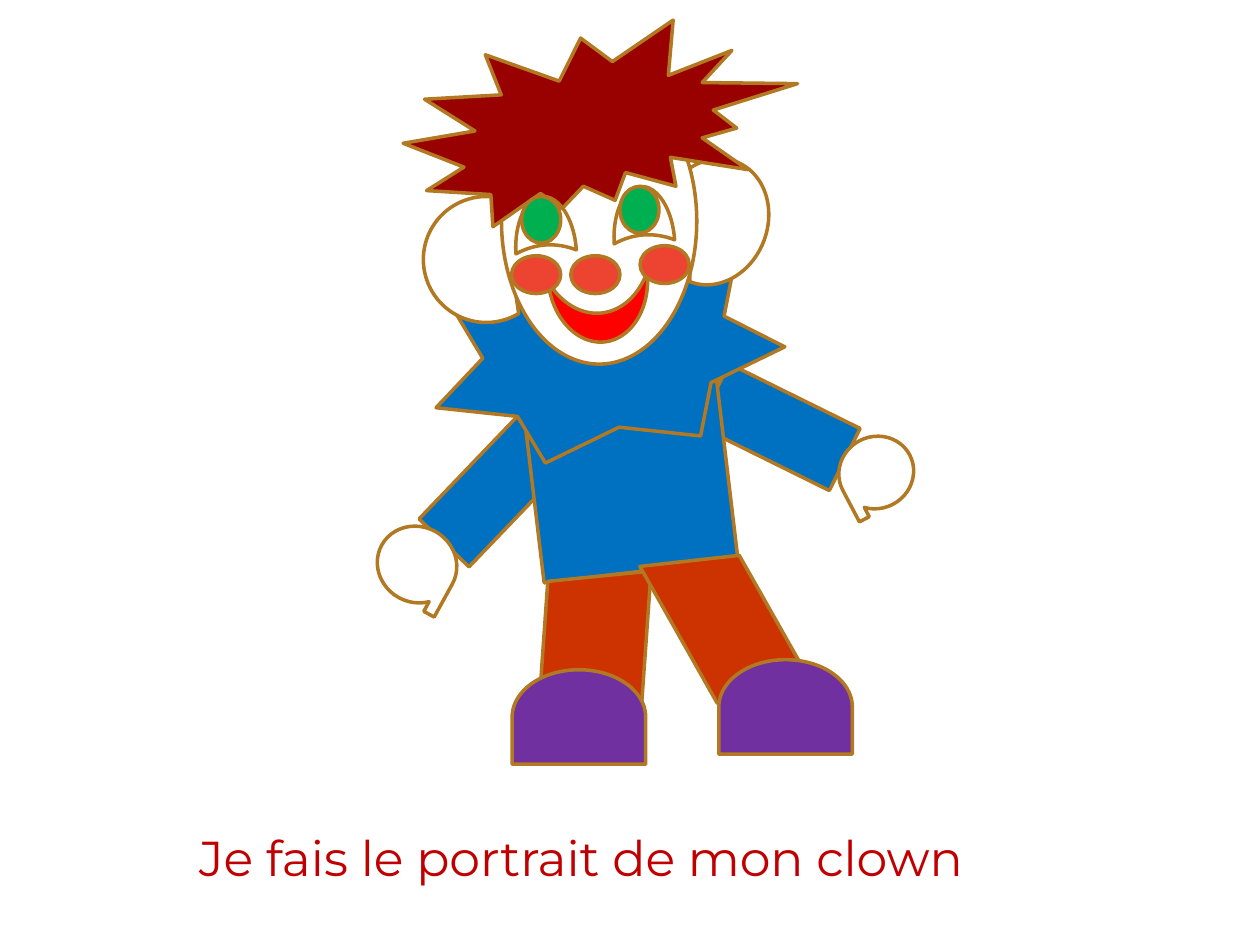
from dataclasses import dataclass

from pptx import Presentation
from pptx import util as u
from pptx.dml.color import RGBColor
from pptx.enum import shapes, text

Kind = shapes.MSO_SHAPE


@dataclass(frozen=True)
class Theme:
    font: str = "Montserrat"
    caption_size: int = 28
    line_width: int = 2
    caption: str = "C00000"
    outline: str = "B27822"
    skin: str = "FFFFFF"
    clothes: str = "0070C0"
    hair: str = "990000"
    mouth: str = "FF0000"
    iris: str = "00B050"
    blush: str = "ED4331"
    trousers: str = "CC3300"
    shoe: str = "7030A0"


class ClownSlide:
    def __init__(self, page, theme):
        self.page = page
        self.theme = theme

    def place(self, item, at):
        item.left, item.top, item.width, item.height = (u.Inches(v) for v in at)

    def draw(self, kind, at, fill=None, turn=0, bend=None, flips=()):
        """Add one outlined body piece; no fill leaves it see-through."""
        shape = self.page.shapes.add_shape(kind, *(u.Inches(v) for v in at))
        shape.shadow.inherit = False
        shape.rotation = turn
        if bend is not None:
            shape.adjustments[0] = bend
        if fill:
            shape.fill.solid()
            shape.fill.fore_color.rgb = RGBColor.from_string(fill)
        else:
            shape.fill.background()
        shape.line.color.rgb = RGBColor.from_string(self.theme.outline)
        shape.line.width = u.Pt(self.theme.line_width)
        for flip in flips:
            shape._element.spPr.xfrm.set(flip, "1")

    def caption(self, wording, at):
        """Use the title placeholder as the caption under the drawing."""
        box = self.page.shapes.title
        self.place(box, at)
        frame = box.text_frame
        frame.word_wrap = False
        frame.auto_size = text.MSO_AUTO_SIZE.NONE
        frame.vertical_anchor = text.MSO_ANCHOR.TOP
        para = frame.paragraphs[0]
        para.alignment = text.PP_ALIGN.LEFT
        span = para.add_run()
        span.text = wording
        span.font.name = self.theme.font
        span.font.size = u.Pt(self.theme.caption_size)
        span.font.color.rgb = RGBColor.from_string(self.theme.caption)


def main():
    deck = Presentation()
    deck.slide_width, deck.slide_height = u.Inches(10), u.Inches(7.5)
    page = deck.slides.add_slide(deck.slide_layouts[5])
    theme = Theme()
    clown = ClownSlide(page, theme)

    # Arms, torso and collar
    for left, top, turn in ((5.91, 2.81, 296.3), (3.65, 3.31, 43.8)):
        clown.draw(Kind.RECTANGLE, (left, top, 0.55, 1.16), theme.clothes, turn)
    clown.draw(Kind.RECTANGLE, (4.22, 2.97, 1.55, 1.57), theme.clothes, 353.2)
    clown.draw(Kind.STAR_7_POINT, (3.4, 1.95, 2.81, 1.63), theme.clothes, 350.1)

    # Ears, head and hair
    clown.draw(Kind.CHORD, (5.23, 1.25, 0.86, 1.02), theme.skin, 201.3)
    clown.draw(Kind.CHORD, (3.36, 1.56, 1, 1), theme.skin, 14.1)
    clown.draw(Kind.OVAL, (3.98, 0.62, 1.55, 2.27), theme.skin)
    clown.draw(Kind.EXPLOSION2, (3.2, 0.16, 3.13, 1.64), theme.hair)

    # Mouth
    clown.draw(Kind.MOON, (4.51, 2.06, 0.52, 0.79), theme.mouth, 264.2, bend=0.443)

    # Eyes: both lids first, then both irises
    eyes = ((4.1, 1.54), (4.88, 1.46))
    for left, top in eyes:
        clown.draw(Kind.MOON, (left, top, 0.44, 0.48), turn=86.2, bend=0.875)
    for left, top in eyes:
        clown.draw(Kind.OVAL, (left + 0.04, top + 0.02, 0.31, 0.37), theme.iris)

    # Nose and cheeks
    for left, top in ((4.53, 2.03), (4.06, 2.03), (5.08, 1.95)):
        clown.draw(Kind.OVAL, (left, top, 0.39, 0.3), theme.blush)

    # Legs and shoes
    clown.draw(Kind.FLOWCHART_DATA, (4.2, 4.58, 1.03, 1.2), theme.trousers, 354.3)
    clown.draw(Kind.FLOWCHART_DATA, (5, 4.63, 1.56, 0.73), theme.trousers, 60.5)
    for left, top in ((4.22, 5.16), (5.86, 5.08)):
        clown.draw(Kind.FLOWCHART_DELAY, (left, top, 0.75, 1.06), theme.shoe, 270)

    # Hands
    hand = Kind.FLOWCHART_SEQUENTIAL_ACCESS_STORAGE
    clown.draw(hand, (3.01, 4.16, 0.6, 0.64), theme.skin, 118.8, flips=("flipV",))
    clown.draw(hand, (6.67, 3.45, 0.57, 0.6), theme.skin, 242.3,
               flips=("flipH", "flipV"))

    # Caption
    clown.caption("Je fais le portrait de mon clown", (1.48, 6.52, 7.02, 0.98))

    deck.save("out.pptx")


if __name__ == "__main__":
    main()
